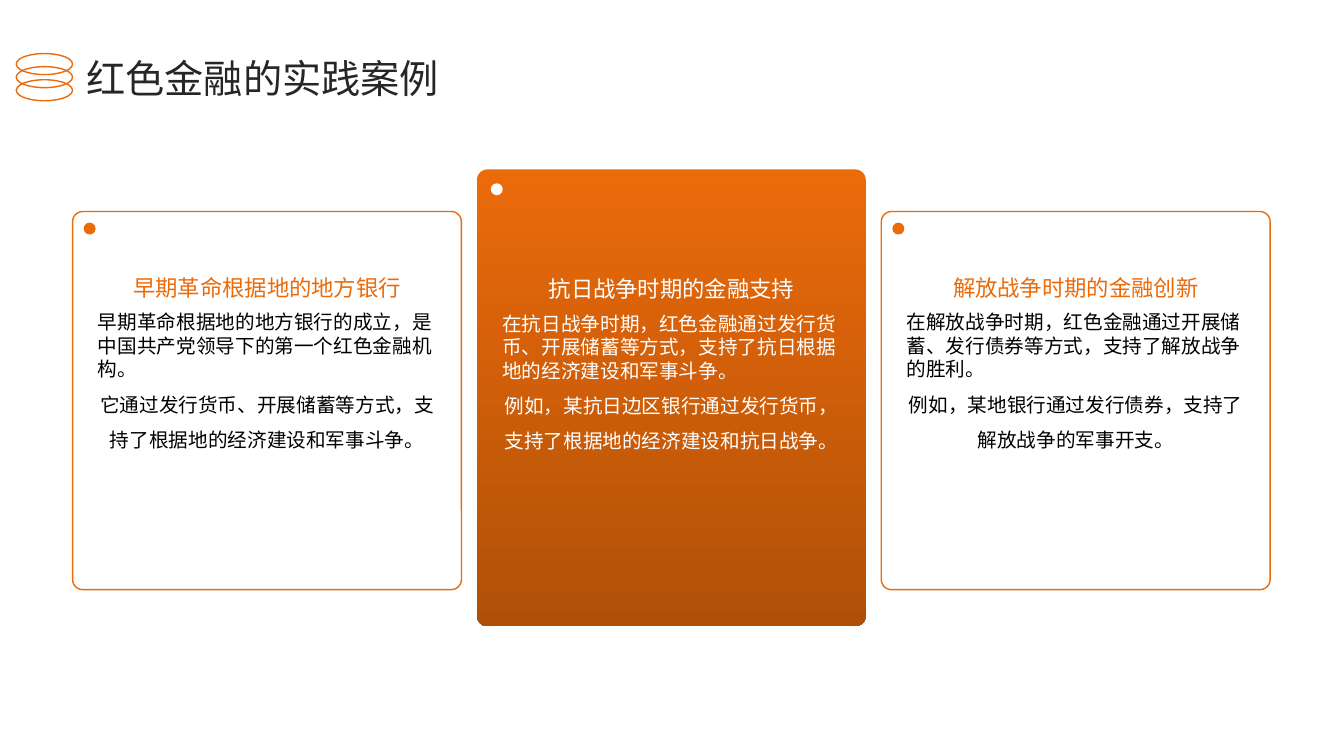
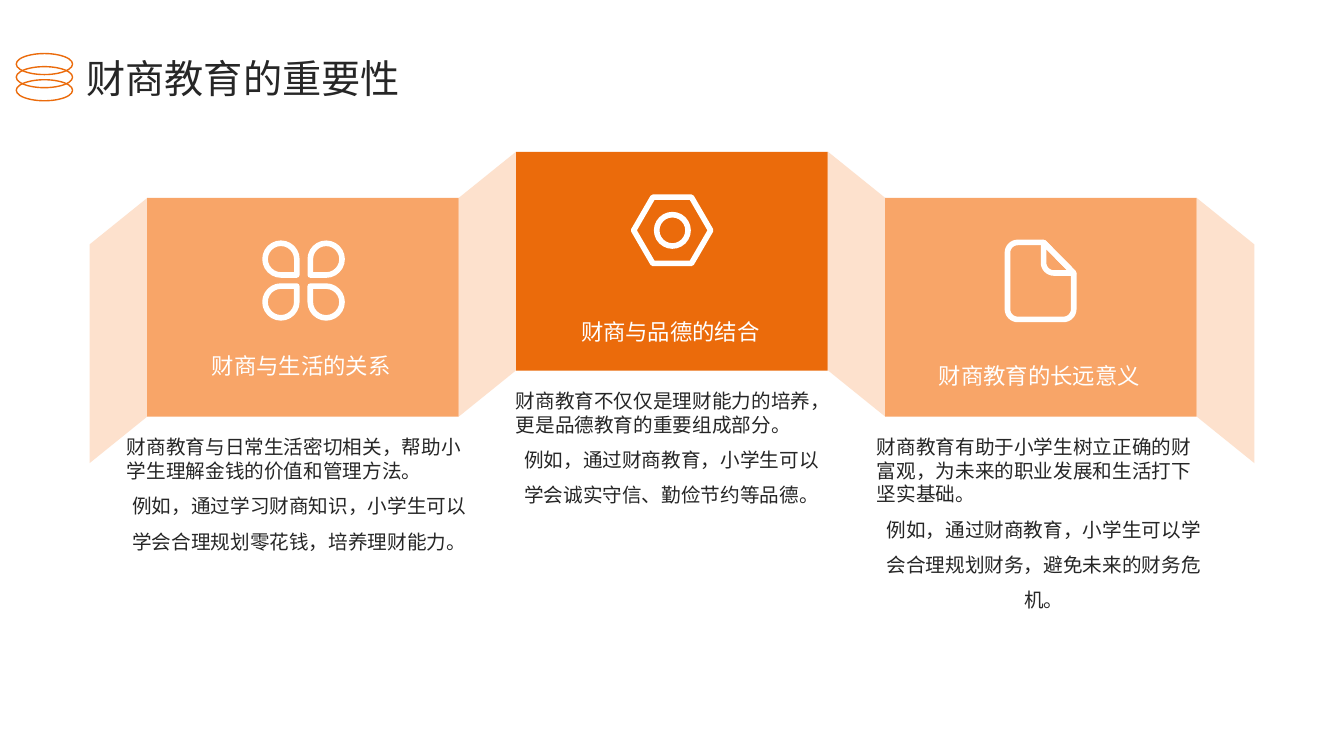
import math

import pptx
import pptx.dml.color
import pptx.enum.shapes
import pptx.enum.text
import pptx.oxml.ns
import pptx.util
from lxml import etree

Cm = pptx.util.Cm
Pt = pptx.util.Pt
KIND = pptx.enum.shapes.MSO_SHAPE
ALIGN = pptx.enum.text.PP_ALIGN
ANCHOR = pptx.enum.text.MSO_ANCHOR

FONT = "Noto Sans CJK SC"
ORANGE, RUST, PEACH, CREAM = "EB6B0B", "B05008", "F8A568", "FDE1CD"
WHITE, BLACK, INK = "FFFFFF", "000000", "262626"

CARDS = [
    ("早期革命根据地的地方银行",
     "早期革命根据地的地方银行的成立，是中国共产党领导下的第一个红色金融机构。\n"
     "它通过发行货币、开展储蓄等方式，支持了根据地的经济建设和军事斗争。"),
    ("抗日战争时期的金融支持",
     "在抗日战争时期，红色金融通过发行货币、开展储蓄等方式，支持了抗日根据地的经济建设和军事斗争。\n"
     "例如，某抗日边区银行通过发行货币，支持了根据地的经济建设和抗日战争。"),
    ("解放战争时期的金融创新",
     "在解放战争时期，红色金融通过开展储蓄、发行债券等方式，支持了解放战争的胜利。\n"
     "例如，某地银行通过发行债券，支持了解放战争的军事开支。"),
]
PANELS = [
    ("财商与生活的关系", 8.33, (3.2, 10.97, 8.69, 6.22),
     "财商教育与日常生活密切相关，帮助小学生理解金钱的价值和管理方法。\n"
     "例如，通过学习财商知识，小学生可以学会合理规划零花钱，培养理财能力。"),
    ("财商与品德的结合", 7.47, (13, 9.8, 7.85, 7.37),
     "财商教育不仅仅是理财能力的培养，更是品德教育的重要组成部分。\n"
     "例如，通过财商教育，小学生可以学会诚实守信、勤俭节约等品德。"),
    ("财商教育的长远意义", 8.58, (22.1, 10.97, 8.41, 6.22),
     "财商教育有助于小学生树立正确的财富观，为未来的职业发展和生活打下坚实基础。\n"
     "例如，通过财商教育，小学生可以学会合理规划财务，避免未来的财务危机。"),
]


def color(code):
    return pptx.dml.color.RGBColor.from_string(code)


def paint(shape, fill=None, line=None, width=1):
    shape.shadow.inherit = False
    if fill:
        shape.fill.solid()
        shape.fill.fore_color.rgb = color(fill)
    else:
        shape.fill.background()
    if line:
        shape.line.color.rgb = color(line)
        shape.line.width = Pt(width)
        etree.SubElement(shape.line._get_or_add_ln(), pptx.oxml.ns.qn("a:round"))
    else:
        shape.line.fill.background()
    return shape


def draw(slide, kind, box, adj=None, turn=0, **look):
    shape = slide.shapes.add_shape(kind, *map(Cm, box))
    if adj is not None:
        shape.adjustments[0] = adj
    shape.rotation = turn
    return paint(shape, **look)


def trace(slide, dots, **look):
    spots = [(Cm(x), Cm(y)) for x, y in dots]
    pen = slide.shapes.build_freeform(*spots[0])
    pen.add_line_segments(spots[1:], close=True)
    return paint(pen.convert_to_shape(), **look)


def bend(x, y, size, start, sweep=90):
    turns = [math.radians(start + sweep * step / 8) for step in range(9)]
    return [(x + size * math.cos(a), y + size * math.sin(a)) for a in turns]


def write(shape, text, size=14, ink=INK, anchor=ANCHOR.TOP,
          aligns=(ALIGN.CENTER,), gaps=(1.1,)):
    frame = shape.text_frame
    frame.word_wrap = True
    frame.auto_size = pptx.enum.text.MSO_AUTO_SIZE.NONE
    frame.vertical_anchor = anchor
    frame.margin_left = frame.margin_right = 0
    frame.margin_top = frame.margin_bottom = 0
    frame.text = text
    for para, align, gap in zip(frame.paragraphs, aligns, gaps):
        para.alignment = align
        para.line_spacing = gap
        para.space_before = Pt(0)
        font = para.runs[0].font
        font.name, font.size = FONT, Pt(size)
        font.color.rgb = color(ink)
        east = etree.SubElement(font._element, pptx.oxml.ns.qn("a:ea"))
        east.set("typeface", FONT)


def label(slide, box, text, **style):
    write(slide.shapes.add_textbox(*map(Cm, box)), text, **style)


def body(slide, box, text, ink=INK):
    label(slide, box, text, ink=ink, aligns=(ALIGN.LEFT, ALIGN.CENTER), gaps=(1.0, 1.5))


def start(deck, text):
    slide = deck.slides.add_slide(deck.slide_layouts[5])
    title = slide.shapes.title
    title.left, title.top, title.width, title.height = map(Cm, (2.18, 1.24, 29.64, 1.3))
    write(title, text, size=28, anchor=ANCHOR.MIDDLE, aligns=(ALIGN.LEFT,))
    for ring in (2, 1, 0):
        draw(slide, KIND.OVAL, (0.41, 1.35 + 0.33 * ring, 1.42, 0.53), line=ORANGE)
    return slide


def card(slide, left, head, text, main):
    top, high, drop = (4.27, 11.51, 0.03) if main else (5.33, 9.53, 0)
    edge = None if main else ORANGE
    shape = draw(slide, KIND.ROUNDED_RECTANGLE, (left, top, 9.8, high), adj=0.027, line=edge)
    if main:
        shape.fill.gradient()
        shape.fill.gradient_angle = 270
        for stop, spot, code in zip(shape.fill.gradient_stops, (0, 1), (ORANGE, RUST)):
            stop.position = spot
            stop.color.rgb = color(code)
    tint = WHITE if main else ORANGE
    inset = 0.35 if main else 0.28
    draw(slide, KIND.OVAL, (left + inset, top + inset, 0.3, 0.3), fill=tint)
    label(slide, (left + 0.64, 6.73 + drop, 8.53, 0.86), head,
          size=16, ink=tint, anchor=ANCHOR.BOTTOM)
    body(slide, (left + 0.64, 7.82 + drop, 8.53, 5.46), text, WHITE if main else BLACK)


def petals(slide, pen):
    for x, y, turn in ((-1, -1, 90), (1, -1, 180), (-1, 1, 0), (1, 1, 270)):
        box = (7.25 + 0.57 * x, 6.67 + 0.54 * y, 0.8, 0.8)
        draw(slide, KIND.TEAR, box, turn=turn, **pen)


def nut(slide, pen):
    draw(slide, KIND.HEXAGON, (15.97, 4.97, 1.94, 1.67), adj=0.29, **pen)
    draw(slide, KIND.OVAL, (16.55, 5.41, 0.79, 0.79), **pen)


def page(slide, pen):
    left, top, right, low, curve = 25.39, 6.11, 27.06, 8.05, 0.26
    fold, crease = 26.3, 6.88
    trace(slide, [(fold, top), (right, crease),
                  *bend(right - curve, low - curve, curve, 0),
                  *bend(left + curve, low - curve, curve, 90),
                  *bend(left + curve, top + curve, curve, 180)], **pen)
    trace(slide, [(fold, top), *bend(fold + curve, crease - curve, curve, 180, -90),
                  (right, crease)], **pen)


def cases(deck):
    slide = start(deck, "红色金融的实践案例")
    for i, (head, text) in enumerate(CARDS):
        card(slide, 1.83 + 10.19 * i, head, text, i == 1)


def values(deck):
    slide = start(deck, "财商教育的重要性")
    left, step, wide, high, rise = 3.71, 9.3, 7.85, 5.51, 1.17
    gap, tall = step - wide, high + rise
    for i in range(4):
        x = left + step * i - gap / 2
        y = 7.16 if i in (1, 2) else 8.33
        box = (x - tall / 2, y - gap / 2, tall, gap)
        fold = draw(slide, KIND.PARALLELOGRAM, box, adj=rise / gap, turn=90, fill=CREAM)
        if i < 2:
            fold._element.spPr.xfrm.set("flipV", "1")
    for i, (head, low, box, text) in enumerate(PANELS):
        x = left + step * i
        top, tint = (3.83, ORANGE) if i == 1 else (4.99, PEACH)
        draw(slide, KIND.RECTANGLE, (x, top, wide, high), fill=tint)
        label(slide, (x + 0.02, low, 7.73, 1.22), head, size=16, ink=WHITE,
              anchor=ANCHOR.BOTTOM, gaps=(1.3,))
        body(slide, box, text)
    for icon in (petals, nut, page):
        icon(slide, {"line": WHITE, "width": 4})


def main():
    deck = pptx.Presentation()
    deck.slide_width, deck.slide_height = Cm(33.87), Cm(19.05)
    cases(deck)
    values(deck)
    deck.save("out.pptx")


if __name__ == "__main__":
    main()
